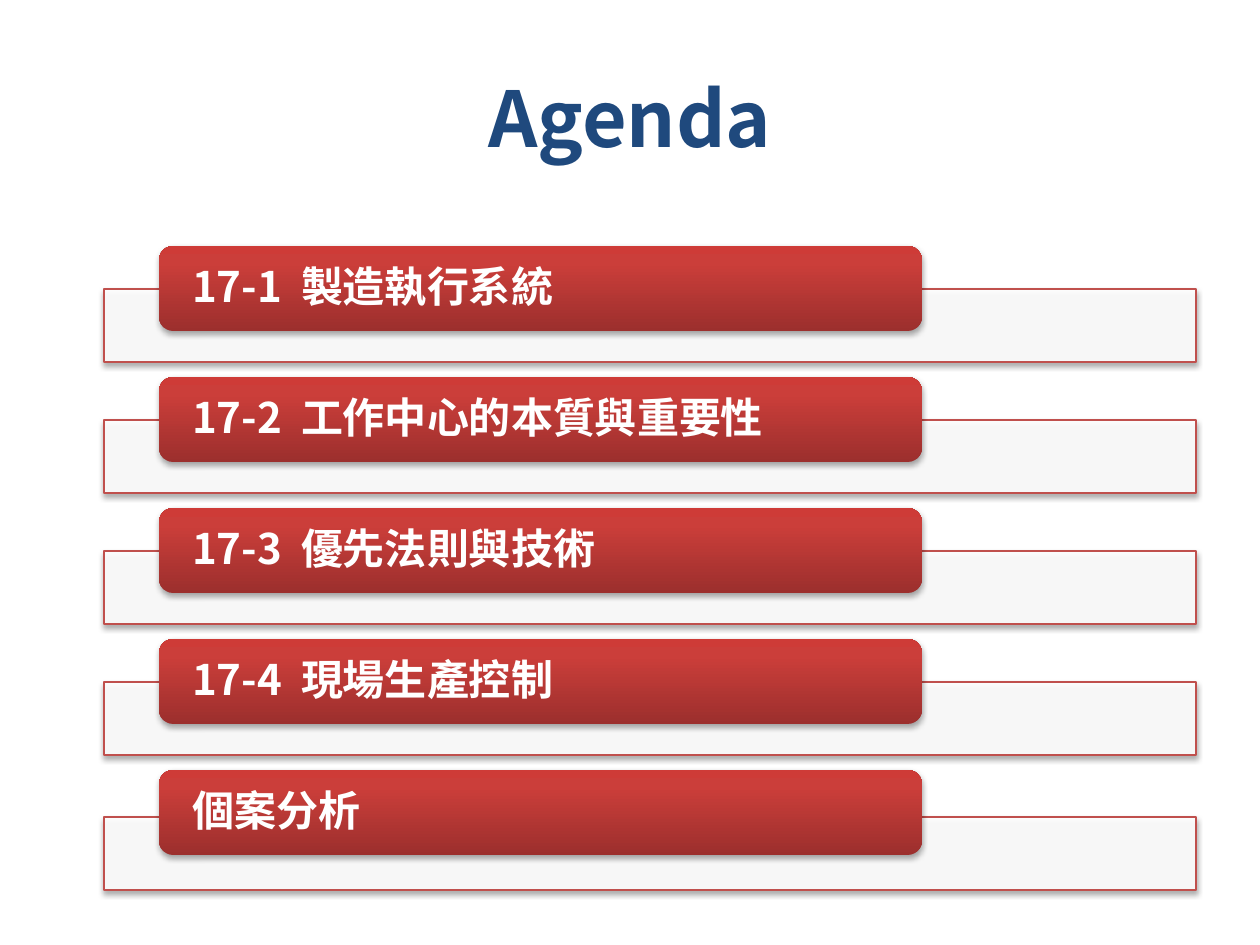
import dataclasses
import pptx
import pptx.util
import pptx.dml.color
import pptx.enum.shapes
import pptx.enum.text
import pptx.oxml
import pptx.oxml.ns
from lxml import etree

SCALE = 914400 / 126
SHAPE = pptx.enum.shapes.MSO_SHAPE
ALIGN = pptx.enum.text.PP_ALIGN
MIDDLE = pptx.enum.text.MSO_ANCHOR.MIDDLE
NS = pptx.oxml.ns.nsdecls("a")


@dataclasses.dataclass(frozen=True)
class Theme:
    font: str = "Noto Sans CJK SC"
    navy: str = "1F497D"
    white: str = "FFFFFF"
    edge: str = "C0504D"
    shade: str = "000000"
    reds: tuple = ((0, "9C2F2D"), (80, "CB3E3A"), (100, "CE3B37"))
    head: int = 44
    item: int = 24


def px(n):
    return pptx.util.Emu(round(n * SCALE))


def rgb(code):
    return pptx.dml.color.RGBColor.from_string(code)


class Deck:
    def __init__(self, theme):
        self.theme = theme
        self.prs = pptx.Presentation()
        self.prs.slide_width, self.prs.slide_height = px(1260), px(945)
        self.slide = self.prs.slides.add_slide(self.prs.slide_layouts[5])

    def run(self, para, text, size, color, gap=0):
        run = para.add_run()
        run.text = text
        font = run.font
        font.name, font.size, font.bold = self.theme.font, pptx.util.Pt(size), True
        font.color.rgb = rgb(color)
        props = run._r.get_or_add_rPr()
        east = etree.SubElement(props, pptx.oxml.ns.qn("a:ea"))
        east.set("typeface", self.theme.font)
        if gap:
            props.set("spc", str(gap))

    def title(self, text, x, y, w, h):
        box = self.slide.shapes.title
        box.left, box.top, box.width, box.height = map(px, (x, y, w, h))
        box.text_frame.vertical_anchor = MIDDLE
        para = box.text_frame.paragraphs[0]
        para.alignment = ALIGN.CENTER
        self.run(para, text, self.theme.head, self.theme.navy)

    def shape(self, kind, x, y, w, h):
        shape = self.slide.shapes.add_shape(kind, *map(px, (x, y, w, h)))
        return shape

    def shadow(self, shape):
        shape.shadow.inherit = False
        effects = shape._element.spPr.find(pptx.oxml.ns.qn("a:effectLst"))
        effects.append(pptx.oxml.parse_xml(
            f'<a:outerShdw {NS} blurRad="40000" dist="23000" dir="5400000" rotWithShape="0">'
            f'<a:srgbClr val="{self.theme.shade}"><a:alpha val="35000"/></a:srgbClr>'
            '</a:outerShdw>'))

    def panel(self, x, y, w, h):
        shape = self.shape(SHAPE.RECTANGLE, x, y, w, h)
        shape.fill.solid()
        shape.fill.fore_color.rgb = rgb(self.theme.white)
        color = shape._element.spPr.find(".//" + pptx.oxml.ns.qn("a:srgbClr"))
        etree.SubElement(color, pptx.oxml.ns.qn("a:alpha")).set("val", "90000")
        shape.line.color.rgb = rgb(self.theme.edge)
        shape.line.width = pptx.util.Pt(0.75)
        self.shadow(shape)

    def label(self, parts, x, y, w, h):
        shape = self.shape(SHAPE.ROUNDED_RECTANGLE, x, y, w, h)
        shape.line.fill.background()
        stops = "".join(
            f'<a:gs pos="{pos * 1000}"><a:srgbClr val="{code}"/></a:gs>'
            for pos, code in self.theme.reds)
        shape._element.spPr.find(pptx.oxml.ns.qn("a:prstGeom")).addnext(
            pptx.oxml.parse_xml(
                f'<a:gradFill {NS} rotWithShape="1"><a:gsLst>{stops}</a:gsLst>'
                '<a:lin ang="16200000" scaled="0"/></a:gradFill>'))
        self.shadow(shape)
        frame = shape.text_frame
        frame.word_wrap, frame.vertical_anchor = True, MIDDLE
        frame.margin_left = frame.margin_right = px(29)
        frame.margin_top = frame.margin_bottom = 0
        para = frame.paragraphs[0]
        para.alignment, para.line_spacing = ALIGN.LEFT, 0.9
        para.space_after = pptx.util.Pt(8.4)
        for text in parts:
            # Widen the space between number and topic
            self.run(para, text, self.theme.item, self.theme.white,
                     540 if text == " " else 0)


def main():
    deck = Deck(Theme())

    # Heading
    deck.title("Agenda", 63, 38, 1134, 157)

    # Agenda rows at an equal pitch
    topics = [
        ("17-1", " ", "製造執行系統"),
        ("17-2", " ", "工作中心的本質與重要性"),
        ("17-3", " ", "優先法則與技術"),
        ("17-4", " ", "現場生產控制"),
        ("個案分析",),
    ]
    for row, parts in enumerate(topics):
        top = 246 + 131 * row
        # The unnumbered last row has its panel a little lower
        drop = 43 if len(parts) > 1 else 47
        deck.panel(104, top + drop, 1092, 73)
        deck.label(parts, 159, top, 763, 85)

    deck.prs.save("out.pptx")


if __name__ == "__main__":
    main()
